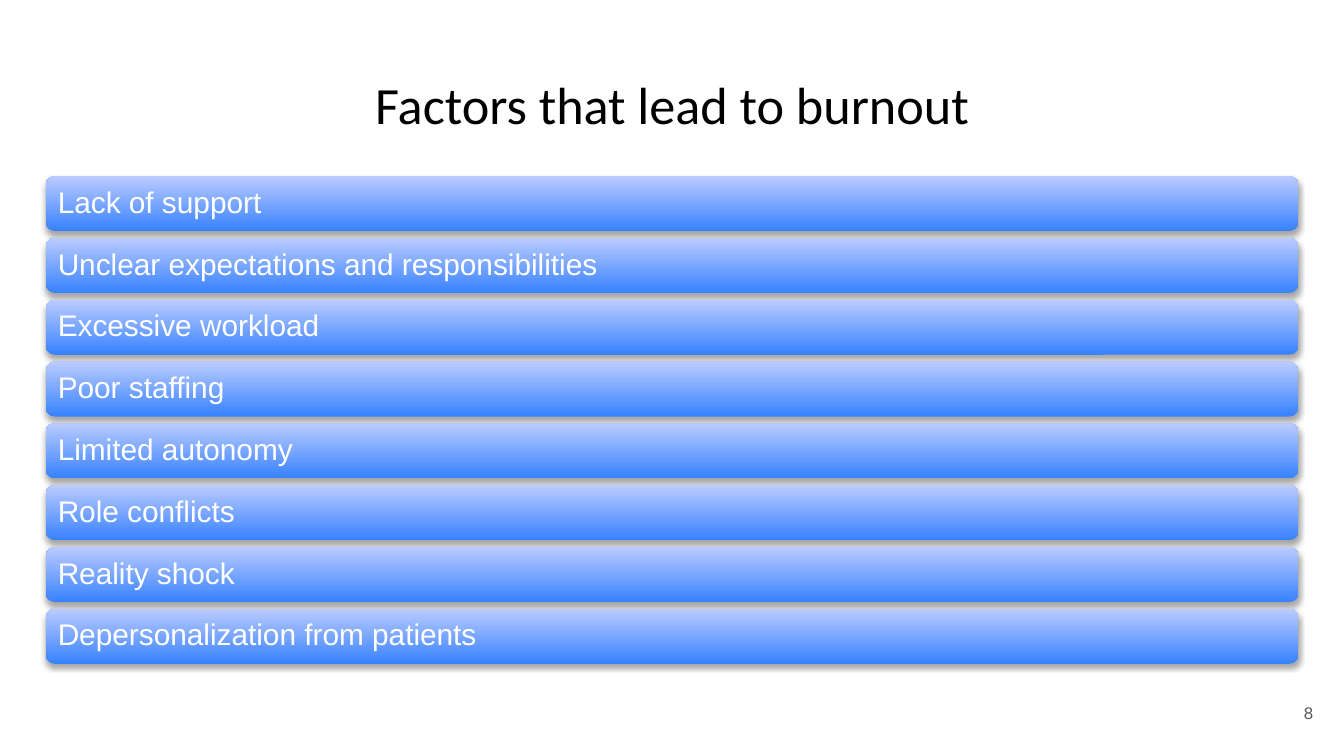
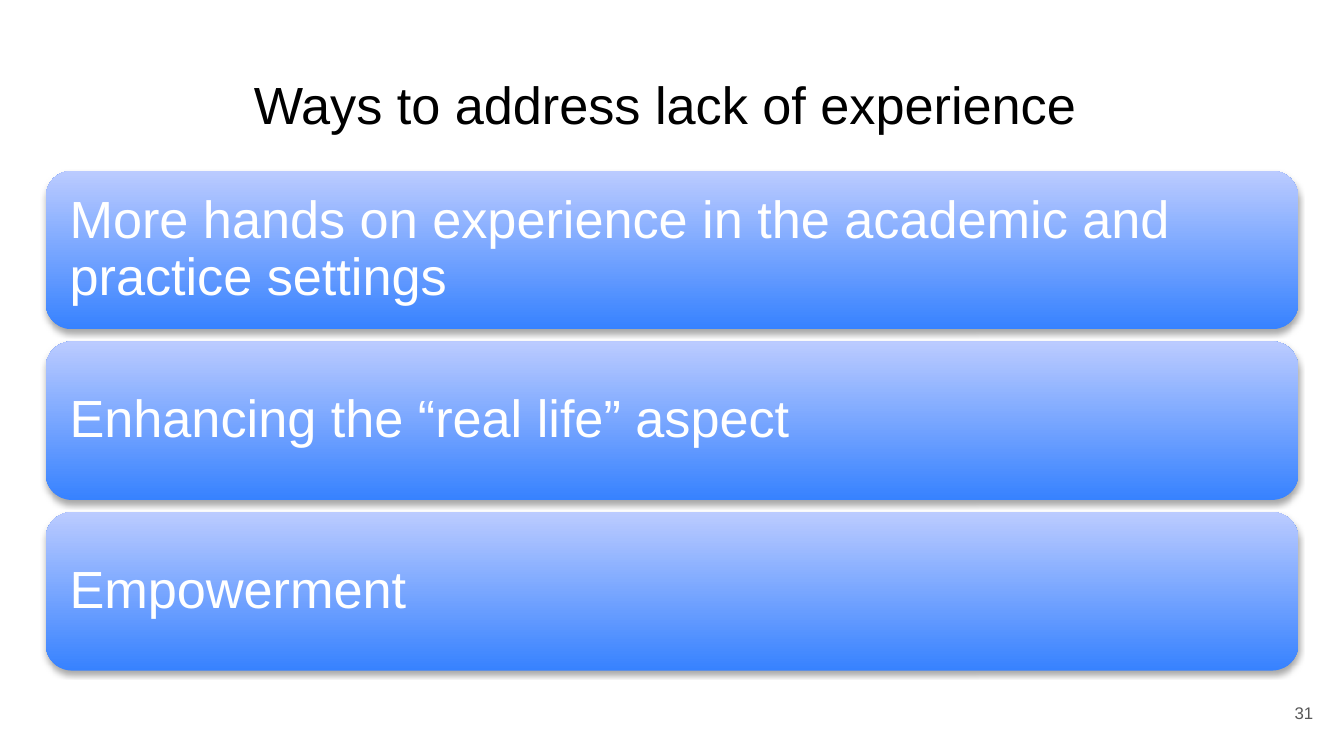
from dataclasses import dataclass

from lxml import etree
from pptx import Presentation
from pptx.dml.color import RGBColor
from pptx.enum.shapes import MSO_SHAPE
from pptx.enum.text import MSO_ANCHOR, PP_ALIGN
from pptx.oxml.ns import qn
from pptx.util import Inches, Pt


@dataclass(frozen=True)
class Theme:
    title_color: str = "000000"
    number_color: str = "595959"
    bar_text: str = "FFFFFF"
    bar_bottom: str = "3782FF"
    bar_top: str = "BBCBFF"
    shadow: str = "000000"
    font: str = "Arial"
    title_size: int = 28
    number_size: int = 9
    left: float = 0.34
    width: float = 9.32


theme = Theme()


def write(box, text, size, color, font=theme.font, align=PP_ALIGN.LEFT,
          anchor=MSO_ANCHOR.MIDDLE, inset=0.1, after=0):
    frame = box.text_frame
    frame.word_wrap = True
    frame.vertical_anchor = anchor
    frame.margin_left = frame.margin_right = Inches(inset)
    frame.margin_top = frame.margin_bottom = Inches(inset)
    para = frame.paragraphs[0]
    para.alignment = align
    para.line_spacing = 0.9
    para.space_after = Pt(after)
    span = para.add_run()
    span.text = text
    span.font.name = font
    span.font.size = Pt(size)
    span.font.color.rgb = RGBColor.from_string(color)


def add_bar(page, top, height):
    bar = page.shapes.add_shape(
        MSO_SHAPE.ROUNDED_RECTANGLE, Inches(theme.left), Inches(top),
        Inches(theme.width), Inches(height))
    bar.line.fill.background()
    bar.fill.gradient()
    bar.fill.gradient_angle = 90
    for stop, position, color in zip(bar.fill.gradient_stops, (0, 1),
                                     (theme.bar_bottom, theme.bar_top)):
        stop.position = position
        stop.color.rgb = RGBColor.from_string(color)
    # Soft shadow straight below the bar
    bar.shadow.inherit = False
    effects = bar._element.spPr.find(qn("a:effectLst"))
    shadow = etree.SubElement(
        effects, qn("a:outerShdw"), blurRad=str(Pt(3.1)), dist=str(Pt(1.8)),
        dir="5400000", rotWithShape="0")
    shade = etree.SubElement(shadow, qn("a:srgbClr"), val=theme.shadow)
    etree.SubElement(shade, qn("a:alpha"), val="35000")
    return bar


slides = [
    dict(title="Factors that lead to burnout", title_font="Calibri", number="8",
         top=1.31, height=0.41, step=0.46, size=16, inset=0.07,
         bars=["Lack of support", "Unclear expectations and responsibilities",
               "Excessive workload", "Poor staffing", "Limited autonomy",
               "Role conflicts", "Reality shock",
               "Depersonalization from patients"]),
    dict(title="Ways to address lack of experience ", title_font="Arial", number="31",
         top=1.27, height=1.18, step=1.27, size=28, inset=0.12,
         bars=["More hands on experience in the academic and practice settings",
               "Enhancing the “real life” aspect", "Empowerment"]),
]

# Widescreen 16:9 deck
deck = Presentation()
deck.slide_width = Inches(10)
deck.slide_height = Inches(10 * 9 / 16)

for content in slides:
    page = deck.slides.add_slide(deck.slide_layouts[6])

    # Title
    title = page.shapes.add_textbox(Inches(theme.left), Inches(0.49),
                                    Inches(theme.width), Inches(0.63))
    write(title, content["title"], theme.title_size, theme.title_color,
          font=content["title_font"], align=PP_ALIGN.CENTER, anchor=MSO_ANCHOR.TOP)

    # Slide number
    number = page.shapes.add_textbox(Inches(9.27), Inches(5.1),
                                     Inches(0.6), Inches(0.43))
    write(number, content["number"], theme.number_size, theme.number_color,
          align=PP_ALIGN.RIGHT, after=6)

    # Stack of bars
    for row, text in enumerate(content["bars"]):
        bar = add_bar(page, content["top"] + row * content["step"], content["height"])
        write(bar, text, content["size"], theme.bar_text, inset=content["inset"])

deck.save("out.pptx")
